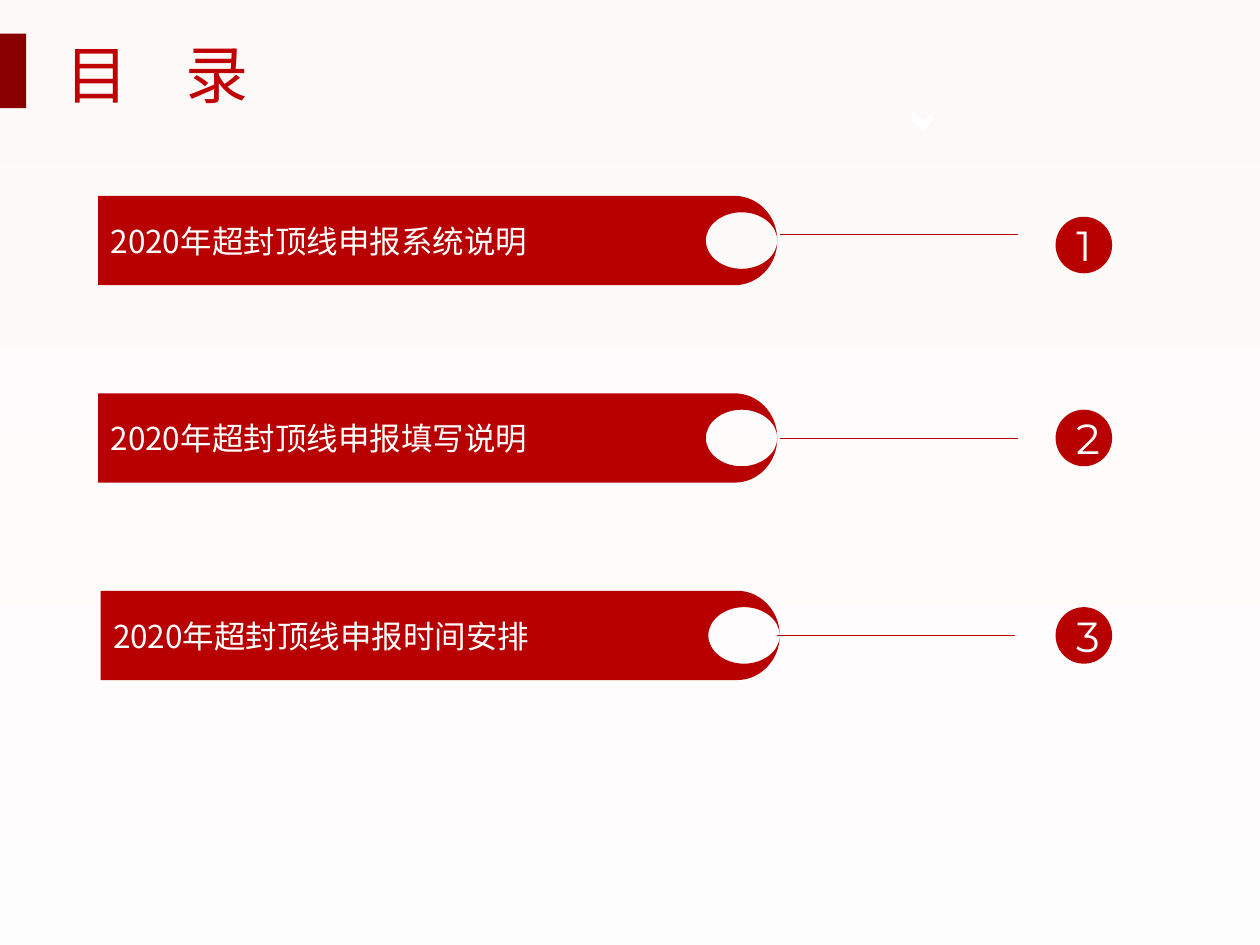
from copy import deepcopy

from lxml.etree import SubElement
from pptx import Presentation
from pptx.dml.color import RGBColor
from pptx.enum.shapes import MSO_CONNECTOR, MSO_SHAPE
from pptx.enum.text import MSO_ANCHOR, MSO_AUTO_SIZE, PP_ALIGN
from pptx.oxml.ns import qn
from pptx.util import Cm, Pt

RED = RGBColor(0xB8, 0x00, 0x00)
DARK = RGBColor(0x8A, 0x00, 0x00)
TITLE = RGBColor(0xC0, 0x00, 0x00)
WHITE = RGBColor(0xFF, 0xFF, 0xFF)
ROSE = RGBColor(0xE4, 0x8D, 0x8D)
BLUSH = RGBColor(0xEC, 0xBB, 0xBB)
PALE = RGBColor(0xF5, 0xDE, 0xDE)
HAN = "Noto Sans CJK SC"

WIDE, HIGH = 25.4, 19.05
BAR_W, BAR_H = 13.69, 1.8
TOP, STEP = 3.95, 3.98
BEND = 0.55  # handle length of a quarter curve

# Text, tail in Arial, bar left, line left, line drop, badge drop
ROWS = [
    ("2020年超封顶线申报系统", "说明", 1.98, 15.72, 0.78, 0.42),
    ("2020年超封顶线申报", "填写说明", 1.98, 15.72, 0.9, 0.33),
    ("2020年超封顶线申报时间安排", "", 2.03, 15.67, 0.9, 0.33),
]


def paint(shape, color):
    shape.shadow.inherit = False
    shape.fill.solid()
    shape.fill.fore_color.rgb = color
    shape.line.fill.background()


def add_box(slide, kind, left, top, width, height, color):
    shape = slide.shapes.add_shape(kind, Cm(left), Cm(top), Cm(width), Cm(height))
    paint(shape, color)
    return shape


def set_font(par, name, size, color):
    font = par.font
    font.name, font.size, font.color.rgb = name, Pt(size), color
    props = par._p.pPr.find(qn("a:defRPr"))
    SubElement(props, qn("a:ea")).set("typeface", HAN)


def add_back(slide):
    # Rose gradient under a nearly opaque white veil
    fill = slide.background.fill
    fill.gradient()
    fill.gradient_angle = 270
    first = fill.gradient_stops[0]._gs
    first.addnext(deepcopy(first))
    for stop, color, pos in zip(fill.gradient_stops, (ROSE, BLUSH, PALE), (0, 0.5, 1)):
        stop.color.rgb = color
        stop.position = pos
    veil = add_box(slide, MSO_SHAPE.RECTANGLE, 0, 0, WIDE, HIGH, WHITE)
    tint = veil.fill._xPr.find(qn("a:solidFill"))[0]
    SubElement(tint, qn("a:alpha")).set("val", "95000")


def add_head(slide, left, top):
    # Side block
    add_box(slide, MSO_SHAPE.RECTANGLE, left, top, 0.53, 1.5, DARK)

    # Title, with a tab stop between its two characters
    title = slide.shapes.title
    title.left, title.top = Cm(left + 1.07), Cm(top - 0.1)
    title.width, title.height = Cm(5.94), Cm(1.8)
    frame = title.text_frame
    frame.auto_size = MSO_AUTO_SIZE.NONE
    frame.vertical_anchor = MSO_ANCHOR.TOP
    par = frame.paragraphs[0]
    par.add_run().text = "目\t录"
    par.alignment = PP_ALIGN.LEFT
    tabs = SubElement(par._p.get_or_add_pPr(), qn("a:tabLst"))
    SubElement(tabs, qn("a:tab"), pos=str(Cm(2.41)), algn="l")
    set_font(par, HAN, 36, TITLE)

    # Title sits above the veil
    tree = slide.shapes._spTree
    tree.remove(title._element)
    tree.append(title._element)

    # Small white chevron
    mark = add_box(slide, MSO_SHAPE.CHEVRON, left + 18.39, top + 1.56, 0.41, 0.41, WHITE)
    mark.rotation = 90


def bend(step, start, end, flat):
    # Turn a straight step into a quarter curve that leaves flat or upright
    (x, y), (u, v) = start, end
    near, far = x + BEND * (u - x), u - BEND * (u - x)
    low, high = y + BEND * (v - y), v - BEND * (v - y)
    grips = [(near, y), (u, high)] if flat else [(x, low), (far, v)]
    step.tag = qn("a:cubicBezTo")
    for i, (a, b) in enumerate(grips):
        grip = SubElement(step, qn("a:pt"), x=str(Cm(a)), y=str(Cm(b)))
        step.insert(i, grip)


def add_bar(slide, left, top, text, tail):
    # Round-ended bar with an oval cut out of its end
    mid, neck, hub = BAR_H / 2, 12.83, 12.97
    tip = (BAR_W, mid)
    points = [
        (0, 0), (neck, 0), tip,
        (hub, mid - 0.57), (2 * hub - BAR_W, mid), (hub, mid + 0.57), tip,
        (neck, BAR_H), (0, BAR_H),
    ]
    spots = [(Cm(left + x), Cm(top + y)) for x, y in points]
    form = slide.shapes.build_freeform(*spots[0])
    form.add_line_segments(spots[1:], close=True)
    bar = form.convert_to_shape()
    paint(bar, RED)
    steps = list(bar._element.iter(qn("a:lnTo")))
    for i in range(1, 7):
        bend(steps[i], points[i], points[i + 1], i % 2 == 1)

    # Label
    frame = bar.text_frame
    frame.word_wrap = True
    frame.vertical_anchor = MSO_ANCHOR.MIDDLE
    par = frame.paragraphs[0]
    par.alignment = PP_ALIGN.LEFT
    par.add_run().text = text
    set_font(par, HAN, 18, WHITE)
    if tail:
        run = par.add_run()
        run.text = tail
        run.font.name = "Arial"


def add_line(slide, left, top):
    line = slide.shapes.add_connector(
        MSO_CONNECTOR.STRAIGHT, Cm(left), Cm(top), Cm(left + 4.8), Cm(top))
    line.line.color.rgb = RED
    line.line.width = Pt(0.5)
    SubElement(line._element.spPr, qn("a:effectLst"))


def add_badge(slide, left, top, num):
    badge = add_box(slide, MSO_SHAPE.OVAL, left, top, 1.14, 1.14, RED)
    frame = badge.text_frame
    frame.vertical_anchor = MSO_ANCHOR.MIDDLE
    par = frame.paragraphs[0]
    par.add_run().text = str(num)
    par.alignment = PP_ALIGN.CENTER
    set_font(par, "Montserrat", 24, WHITE)


def add_list(slide, top):
    for i, (text, tail, left, start, drop, fall) in enumerate(ROWS):
        row = top + i * STEP
        add_bar(slide, left, row, text, tail)
        add_line(slide, start, row + drop)
        add_badge(slide, 21.28, row + fall, i + 1)


def main():
    deck = Presentation()
    deck.slide_width, deck.slide_height = Cm(WIDE), Cm(HIGH)
    slide = deck.slides.add_slide(deck.slide_layouts[5])
    add_back(slide)
    add_head(slide, 0, 0.68)
    add_list(slide, TOP)
    deck.save("out.pptx")


if __name__ == "__main__":
    main()
